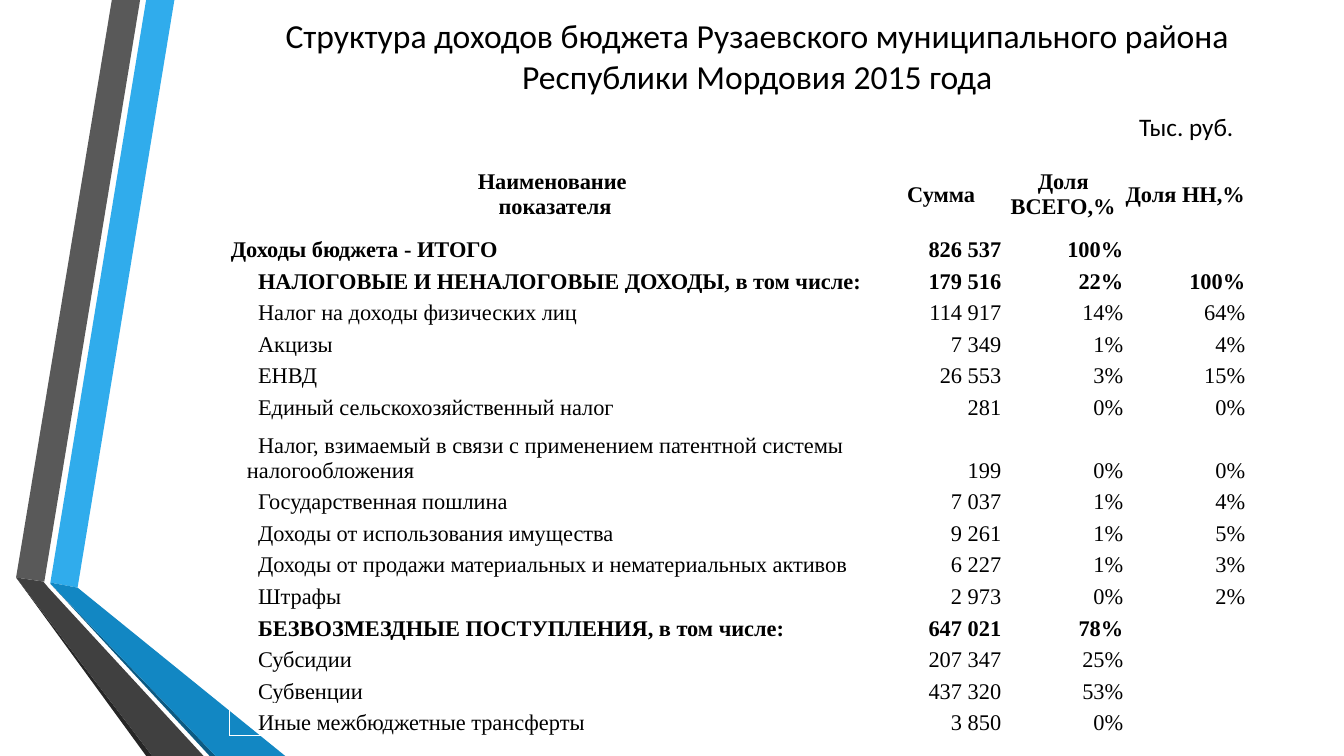
from pptx import Presentation
from pptx.dml.color import RGBColor
from pptx.enum.text import MSO_ANCHOR as Anchor, PP_ALIGN as Align
from pptx.oxml.ns import qn
from pptx.util import Inches, Pt
from lxml.etree import SubElement

WIDTH, HEIGHT = 13.33, 7.5
BLACK, WHITE = "000000", "FFFFFF"

RIBBONS = [
    ("30ACEC", [(0.5, 5.78), (0.77, 5.83), (1.73, 0), (1.45, 0)]),
    ("595959", [(1.39, 0), (1.11, 0), (0.16, 5.73), (0.44, 5.77)]),
    ("262626", [(0.16, 5.73), (1.45, 7.5), (1.51, 7.5)]),
    ("0C5A82", [(0.5, 5.79), (2.08, 7.5), (2.14, 7.5)]),
    ("1287C3", [(0.5, 5.79), (2.14, 7.5), (2.83, 7.5), (0.77, 5.83), (0.5, 5.78)]),
    ("404040", [(2.02, 7.5), (0.48, 5.83), (0.43, 5.77), (0.16, 5.73), (1.51, 7.5)]),
]

HEADER = ["Наименование \vпоказателя", "Сумма", "Доля ВСЕГО,%", "Доля НН,%"]
INCOME = [
    ("Доходы бюджета - ИТОГО", "826 537", "100%", ""),
    ("НАЛОГОВЫЕ И НЕНАЛОГОВЫЕ ДОХОДЫ, в том числе:", "179 516", "22%", "100%"),
    ("Налог на доходы физических лиц", "114 917", "14%", "64%"),
    ("Акцизы", "7 349", "1%", "4%"),
    ("ЕНВД", "26 553", "3%", "15%"),
    ("Единый сельскохозяйственный налог", "281", "0%", "0%"),
    ("Налог, взимаемый в связи с применением патентной системы налогообложения",
     "199", "0%", "0%"),
    ("Государственная пошлина", "7 037", "1%", "4%"),
    ("Доходы от использования имущества", "9 261", "1%", "5%"),
    ("Доходы от продажи материальных и нематериальных активов", "6 227", "1%", "3%"),
    ("Штрафы", "2 973", "0%", "2%"),
    ("БЕЗВОЗМЕЗДНЫЕ ПОСТУПЛЕНИЯ, в том числе:", "647 021", "78%", ""),
    ("Субсидии", "207 347", "25%", ""),
    ("Субвенции", "437 320", "53%", ""),
    ("Иные межбюджетные трансферты", "3 850", "0%", ""),
]
TOTAL_ROW, TALL_ROW = 1, 7
BOLD_ROWS = {0, TOTAL_ROW, 2, 12}


def color(value):
    return RGBColor.from_string(value)


def assign(target, values):
    for name, value in values.items():
        setattr(target, name, value)


def format_font(font, name, size, bold=False):
    assign(font, {"name": name, "size": Pt(size), "bold": bold})
    font.color.rgb = color(BLACK)


def draw_ribbons(page):
    for fill, points in RIBBONS:
        start, *others = [(Inches(x), Inches(y)) for x, y in points]
        builder = page.shapes.build_freeform(*start)
        builder.add_line_segments(others, close=True)
        ribbon = builder.convert_to_shape()
        ribbon.shadow.inherit = False
        ribbon.fill.solid()
        ribbon.fill.fore_color.rgb = color(fill)
        ribbon.line.fill.background()


def add_label(page, box, text, size, frame_values, align=Align.LEFT):
    label = page.shapes.add_textbox(*map(Inches, box))
    assign(label.text_frame, frame_values)
    para = label.text_frame.paragraphs[0]
    para.alignment = align
    span = para.add_run()
    span.text = text
    format_font(span.font, "Calibri", size)


def add_borders(cell):
    properties = cell._tc.get_or_add_tcPr()
    for side in ("a:lnL", "a:lnR", "a:lnT", "a:lnB"):
        line = SubElement(properties, qn(side), w=str(Pt(1)))
        fill = SubElement(line, qn("a:solidFill"))
        SubElement(fill, qn("a:srgbClr"), val=WHITE)


def fill_cell(cell, text, row, column):
    indented = column == 0 and row > TOTAL_ROW
    assign(cell, {
        "margin_left": Inches(0.17 if indented else 0.01),
        "margin_right": Inches(0.01),
        "margin_top": Inches(0.01),
        "margin_bottom": 0,
        "vertical_anchor": Anchor.BOTTOM if row else Anchor.MIDDLE,
    })
    add_borders(cell)
    cell.fill.background()
    cell.text_frame.text = text
    para = cell.text_frame.paragraphs[0]
    if row == 0:
        para.alignment = Align.CENTER
    else:
        para.alignment = Align.RIGHT if column else Align.LEFT
    if indented:
        properties = para._p.get_or_add_pPr()
        properties.set("marL", "0")
        properties.set("indent", str(Inches(0.11)))
    for part in (para, *para.runs):
        format_font(part.font, "Times New Roman", 16, row in BOLD_ROWS)


def add_income_table(page, box):
    rows = [HEADER, *INCOME]
    left, top, width, height = box
    number_width, header_height = 1.21, 0.73
    line_height = (height - header_height) / (len(INCOME) + 1)
    frame = page.shapes.add_table(len(rows), len(HEADER), *map(Inches, box))
    table = frame.table
    assign(table, {"first_row": False, "horz_banding": False})
    for column in table.columns:
        column.width = Inches(number_width)
    table.columns[0].width = Inches(width - number_width * (len(HEADER) - 1))
    for line in table.rows:
        line.height = Inches(line_height)
    table.rows[0].height = Inches(header_height)
    table.rows[TALL_ROW].height = Inches(2 * line_height)
    for row, texts in enumerate(rows):
        for column, text in enumerate(texts):
            fill_cell(table.cell(row, column), text, row, column)


def build_income_slide(deck):
    page = deck.slides.add_slide(deck.slide_layouts[6])
    page.background.fill.solid()
    page.background.fill.fore_color.rgb = color(WHITE)
    draw_ribbons(page)
    add_label(page, (1.89, 0.13, 11.24, 0.84),
              "Структура доходов бюджета Рузаевского муниципального района "
              "Республики Мордовия 2015 года", 24,
              {"word_wrap": True, "vertical_anchor": Anchor.MIDDLE,
               "margin_left": Inches(0.3), "margin_right": Inches(0.3)},
              Align.CENTER)
    add_income_table(page, (2.28, 1.56, 10.08, 5.74))
    add_label(page, (11.2, 1.06, 1.17, 0.4), "Тыс. руб.", 18, {"word_wrap": False})


def main():
    deck = Presentation()
    assign(deck, {"slide_width": Inches(WIDTH), "slide_height": Inches(HEIGHT)})
    build_income_slide(deck)
    deck.save("out.pptx")


if __name__ == "__main__":
    main()
